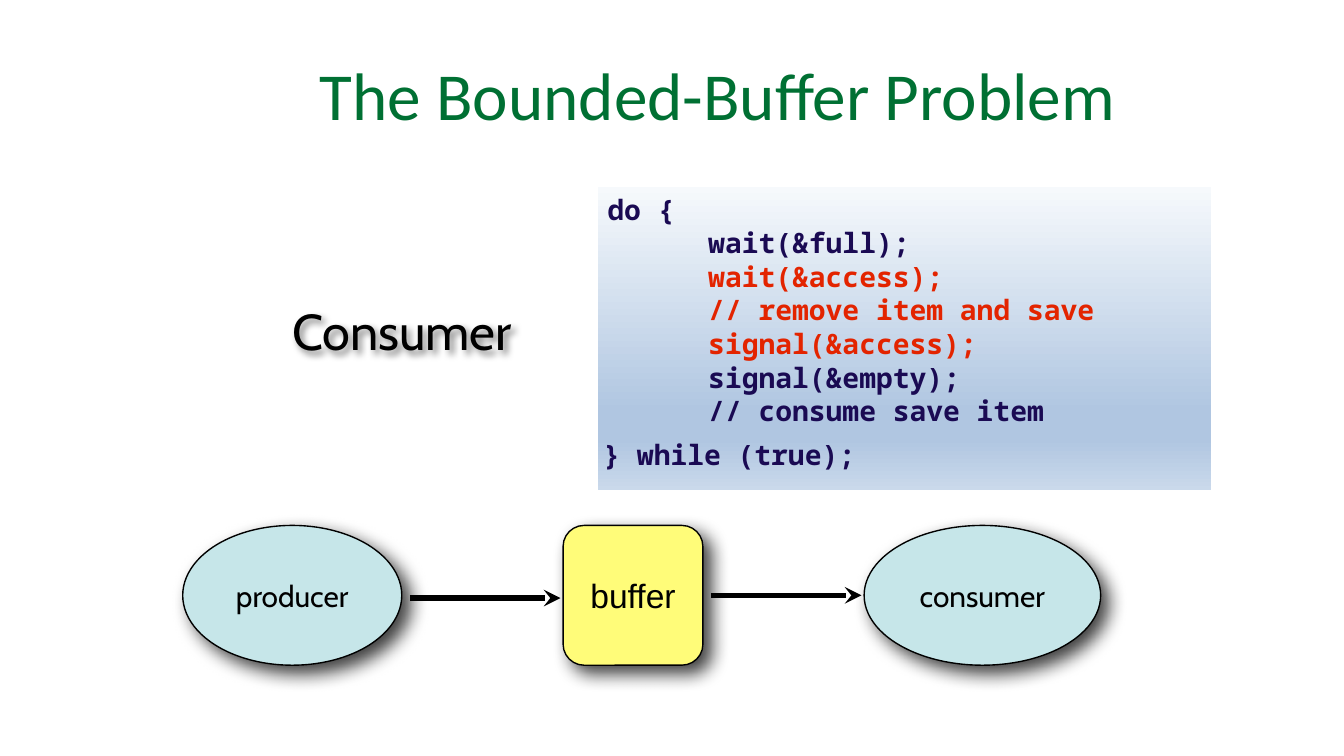
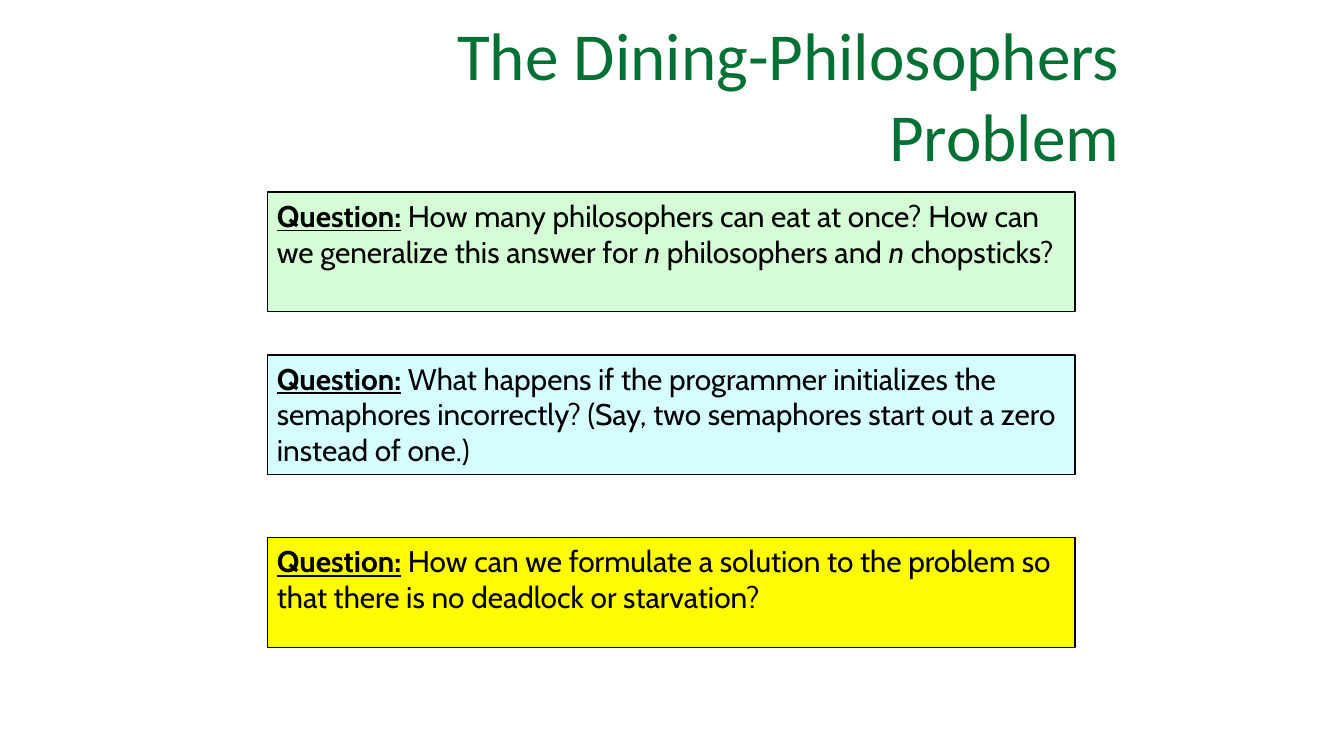
from dataclasses import dataclass
from pptx import Presentation
from pptx.dml.color import RGBColor
from pptx.enum.shapes import MSO_CONNECTOR, MSO_SHAPE as SHAPE
from pptx.enum.text import MSO_ANCHOR as ANCHOR, MSO_AUTO_SIZE as AUTO, PP_ALIGN as ALIGN
from pptx.oxml import parse_xml
from pptx.oxml.ns import nsdecls, qn
from pptx.util import Inches, Pt

COLS, ROWS = 100, 56.25


@dataclass(frozen=True)
class Theme:
    green: str = "007033"
    black: str = "000000"
    process: str = "C6E6E9"
    buffer: str = "FFFC79"
    code: str = "1A0A53"
    critical: str = "E32400"
    mint: str = "D4FDD5"
    sky: str = "D4FEFF"
    yellow: str = "FFFB00"
    code_stops: tuple = ((0, "F6F9FC"), (74, "B0C6E1"), (83, "B0C6E1"), (100, "CAD9EB"))
    title_font: str = "Calibri"
    body_font: str = "Cabin"
    plain_font: str = "Arial"
    code_font: str = "Noto Sans Mono"
    title_size: int = 36
    heading_size: int = 27
    buffer_size: int = 18
    body_size: int = 16
    code_size: int = 15
    edge: float = 0.75
    arrow: float = 3
    inset: float = 0.04
    indent: float = 0.03


class Deck:
    def __init__(self, theme):
        self.t = theme
        self.prs = Presentation()
        self.prs.slide_width, self.prs.slide_height = Inches(10), Inches(10 * 9 / 16)
        self.s = None

    def x(self, cols):
        return round(self.prs.slide_width * cols / COLS)

    def y(self, rows):
        return round(self.prs.slide_height * rows / ROWS)

    def box(self, left, top, width, height):
        return self.x(left), self.y(top), self.x(width), self.y(height)

    def frame(self, sp, anchor=ANCHOR.TOP):
        tf = sp.text_frame
        tf.word_wrap = True
        tf.auto_size = AUTO.NONE
        tf.vertical_anchor = anchor
        tf.margin_left = tf.margin_right = Inches(self.t.inset)
        tf.margin_top = tf.margin_bottom = Inches(self.t.inset)
        return tf

    def para(self, p, align=ALIGN.LEFT, margin=None, first=0, right=0):
        p.alignment = align
        pPr = p._p.get_or_add_pPr()
        pPr.set("marL", str(Inches(self.t.indent if margin is None else margin)))
        pPr.set("marR", str(Inches(right)))
        pPr.set("indent", str(Inches(first)))

    def run(self, p, text, size, font=None, color=None, bold=False, italic=False, underline=False):
        r = p.add_run()
        r.text = text
        f = r.font
        f.size, f.name = Pt(size), font or self.t.body_font
        f.color.rgb = RGBColor.from_string(color or self.t.black)
        f.bold, f.italic, f.underline = bold, italic, underline

    def shadow(self, sp, blur, dist, alpha):
        sp.shadow.inherit = False
        spPr = sp._element.spPr
        spPr.replace(spPr.find(qn("a:effectLst")), parse_xml(
            f'<a:effectLst {nsdecls("a")}><a:outerShdw blurRad="{Pt(blur)}" dist="{Pt(dist)}" '
            f'dir="2700000" algn="tl" rotWithShape="0"><a:srgbClr val="{self.t.black}">'
            f'<a:alpha val="{alpha * 1000}"/></a:srgbClr></a:outerShdw></a:effectLst>'))

    def slide(self, title, right=0):
        self.s = self.prs.slides.add_slide(self.prs.slide_layouts[5])
        sp = self.s.shapes.title
        sp.left, sp.top, sp.width, sp.height = self.box(16.2, 0.8, 67.5, 12.4)
        p = self.frame(sp, ANCHOR.MIDDLE).paragraphs[0]
        self.para(p, ALIGN.RIGHT, right=right)
        self.run(p, title, self.t.title_size, self.t.title_font, self.t.green)

    def shape(self, kind, box, fill=None):
        sp = self.s.shapes.add_shape(kind, *self.box(*box))
        sp.shadow.inherit = False
        if fill:
            sp.fill.solid()
            sp.fill.fore_color.rgb = RGBColor.from_string(fill)
            sp.line.color.rgb = RGBColor.from_string(self.t.black)
            sp.line.width = Pt(self.t.edge)
        else:
            sp.line.fill.background()
        return sp

    def node(self, kind, left, width, text, fill, size, font):
        sp = self.shape(kind, (left, 39.1, width, 10.4), fill)
        if kind == SHAPE.ROUNDED_RECTANGLE:
            sp.adjustments[0] = 0.15
        self.shadow(sp, 10, 6, 75)
        p = self.frame(sp, ANCHOR.MIDDLE).paragraphs[0]
        self.para(p, ALIGN.CENTER, right=self.t.indent)
        self.run(p, text, size, font)

    def arrow(self, start, end, row):
        cx = self.s.shapes.add_connector(
            MSO_CONNECTOR.STRAIGHT, self.x(start), self.y(row), self.x(end), self.y(row))
        cx.line.color.rgb = RGBColor.from_string(self.t.black)
        cx.line.width = Pt(self.t.arrow)
        cx.line._get_or_add_ln().append(parse_xml(f'<a:tailEnd {nsdecls("a")} type="stealth"/>'))
        cx._element.spPr.append(parse_xml(f'<a:effectLst {nsdecls("a")}/>'))

    def heading(self, box, text):
        sp = self.s.shapes.add_textbox(*self.box(*box))
        self.shadow(sp, 4, 3, 50)
        p = self.frame(sp).paragraphs[0]
        self.para(p, ALIGN.CENTER, right=self.t.indent)
        self.run(p, text, self.t.heading_size)

    def code(self, box, lines):
        sp = self.shape(SHAPE.RECTANGLE, box)
        sp.fill.gradient()
        sp.fill.gradient_angle = 270
        stops = sp._element.spPr.find(qn("a:gradFill")).find(qn("a:gsLst"))
        for gs in list(stops):
            stops.remove(gs)
        for pos, color in self.t.code_stops:
            stops.append(parse_xml(
                f'<a:gs {nsdecls("a")} pos="{pos * 1000}"><a:srgbClr val="{color}"/></a:gs>'))
        tf = self.frame(sp)
        for i, (text, margin, color) in enumerate(lines):
            p = tf.add_paragraph() if i else tf.paragraphs[0]
            last = i == len(lines) - 1
            self.para(p, margin=margin, first=0 if last else self.t.indent)
            if last:
                p.space_before = Pt(5.2)
            else:
                p.level = 1
            self.run(p, text, self.t.code_size, self.t.code_font, color, bold=True)

    def question(self, top, height, fill, parts):
        sp = self.shape(SHAPE.RECTANGLE, (19.9, top, 60.1, height), fill)
        p = self.frame(sp).paragraphs[0]
        self.para(p)
        self.run(p, "Question:", self.t.body_size, bold=True, underline=True)
        for i, text in enumerate(parts):
            self.run(p, text, self.t.body_size, italic=i % 2 == 1)


def bounded_buffer(deck):
    t = deck.t
    deck.slide("The Bounded-Buffer Problem", right=t.indent)
    nodes = [
        (SHAPE.OVAL, 13.6, 16.3, "producer", t.process, t.body_size, t.body_font),
        (SHAPE.ROUNDED_RECTANGLE, 41.9, 10.4, "buffer", t.buffer, t.buffer_size, t.plain_font),
        (SHAPE.OVAL, 64.3, 17.6, "consumer", t.process, t.body_size, t.body_font),
    ]
    for node in nodes:
        deck.node(*node)
    for a, b, row in zip(nodes, nodes[1:], (44.5, 44.3)):
        deck.arrow(a[1] + a[2] + 0.6, b[1] - 0.2, row)
    deck.heading((19.8, 21.9, 20.2, 5.1), "Consumer")
    deck.code((44.5, 13.9, 45.6, 22.6), [
        ("do {", 0, t.code),
        ("wait(&full);", 0.75, t.code),
        ("wait(&access);", 0.75, t.critical),
        ("// remove item and save", 0.75, t.critical),
        ("signal(&access);", 0.75, t.critical),
        ("signal(&empty);", 0.75, t.code),
        ("// consume save item", 0.75, t.code),
        ("} while (true);", 0, t.code),
    ])


def dining_philosophers(deck):
    t = deck.t
    deck.slide("The Dining-Philosophers Problem")
    deck.question(14.3, 8.9, t.mint, [
        " How many philosophers can eat at once? How can we generalize this answer for ",
        "n", " philosophers and ", "n", " chopsticks?"])
    deck.question(26.4, 8.9, t.sky, [
        " What happens if the programmer initializes the semaphores incorrectly? "
        "(Say, two semaphores start out a zero instead of one.)"])
    deck.question(40, 8.2, t.yellow, [
        " How can we formulate a solution to the problem so that there is no deadlock "
        "or starvation?"])


def main():
    deck = Deck(Theme())
    bounded_buffer(deck)
    dining_philosophers(deck)
    deck.prs.save("out.pptx")


if __name__ == "__main__":
    main()
